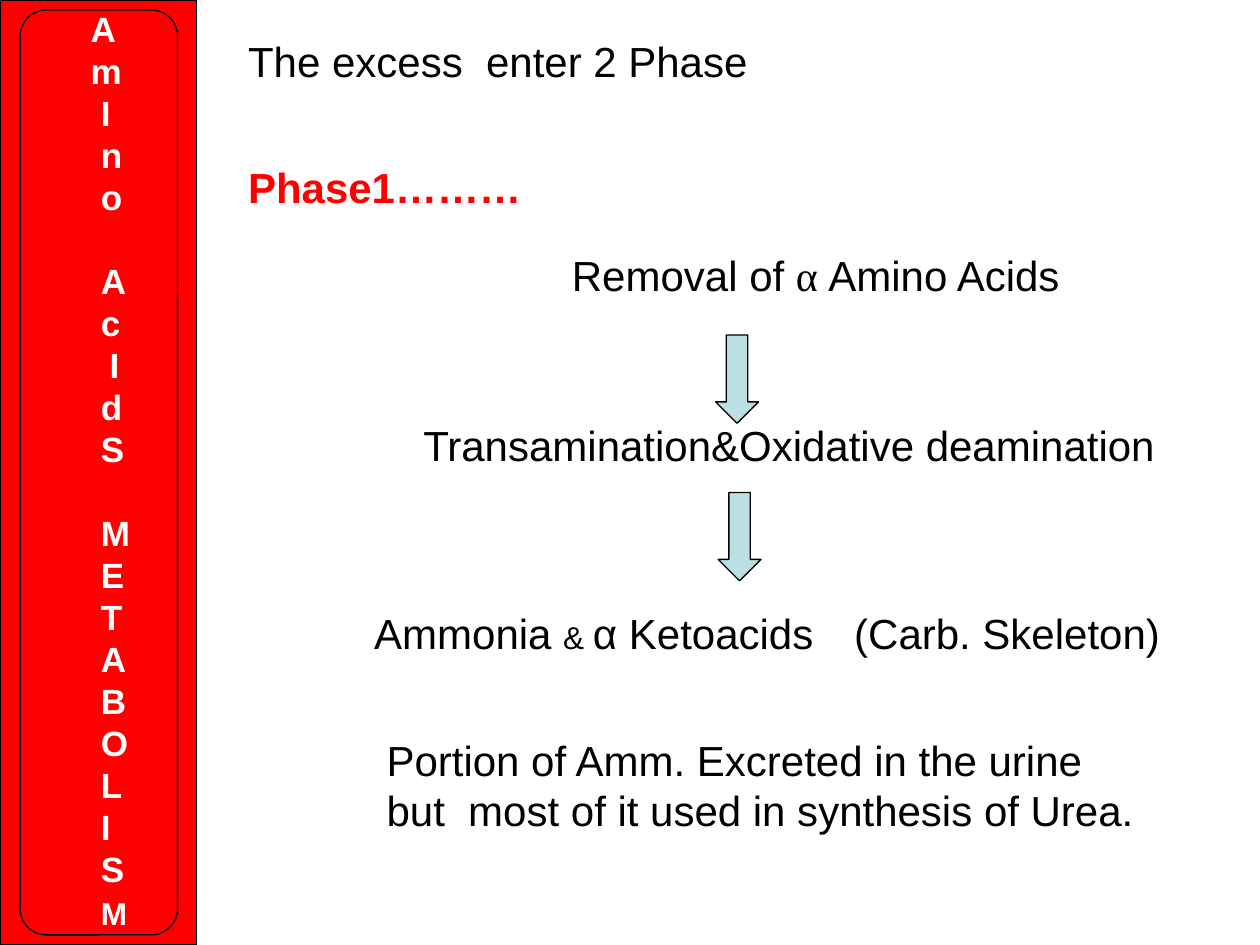
from dataclasses import dataclass

from pptx import Presentation
from pptx.dml.color import RGBColor
from pptx.enum.shapes import MSO_SHAPE
from pptx.enum.text import MSO_ANCHOR, PP_ALIGN
from pptx.oxml.xmlchemy import OxmlElement
from pptx.util import Inches, Pt

BLACK = RGBColor(0, 0, 0)
WHITE = RGBColor(255, 255, 255)
RED = RGBColor(255, 0, 0)
PALE_BLUE = RGBColor(0xBB, 0xE0, 0xE3)


@dataclass
class Letter:
    text: str
    indent: float = 0.08
    size: float = 20
    before: float = 0


@dataclass
class TextBox:
    left: float
    top: float
    width: float
    height: float
    inset: float = 0.1


def add_shape(s, kind, left, top, width, height, fill=None):
    sp = s.shapes.add_shape(kind, Inches(left), Inches(top), Inches(width), Inches(height))
    sp.shadow.inherit = False
    if fill is None:
        sp.fill.background()
    else:
        sp.fill.solid()
        sp.fill.fore_color.rgb = fill
    sp.line.color.rgb = BLACK
    sp.line.width = Pt(0.75)
    return sp


def add_text_box(s, box: TextBox):
    sp = s.shapes.add_textbox(Inches(box.left), Inches(box.top), Inches(box.width), Inches(box.height))
    tf = sp.text_frame
    tf.word_wrap = True
    tf.margin_left = Inches(box.inset)
    return tf


def add_run(p, text: str, *, size: float = 24, color: RGBColor = BLACK,
            bold: bool = False, font: str = "Arial"):
    r = p.add_run()
    r.text = text
    r.font.name = font
    r.font.size = Pt(size)
    r.font.color.rgb = color
    r.font.bold = bold


def next_paragraph(tf, *, before: float = 0, indent: float = 0):
    first = tf.paragraphs[0]
    p = tf.add_paragraph() if first.runs else first
    p.alignment = PP_ALIGN.LEFT
    if before:
        p.space_before = Pt(before)
    if indent:
        p._p.get_or_add_pPr().set("marL", str(Inches(indent)))
    return p


def add_tab_stop(p, position: float):
    tabs = OxmlElement("a:tabLst")
    tab = OxmlElement("a:tab")
    tab.set("pos", str(Inches(position)))
    tab.set("algn", "l")
    tabs.append(tab)
    p._p.get_or_add_pPr().append(tabs)


def add_sidebar(s):
    line_height = 24
    letters = [
        Letter("A", indent=0), Letter("m", indent=0), *map(Letter, "Ino"),
        Letter("A", before=line_height), Letter("c"), Letter("I", indent=0.15), *map(Letter, "dS"),
        Letter("M", before=line_height), *map(Letter, "ETABOLIS"), Letter("M", size=18),
    ]
    tf = add_shape(s, MSO_SHAPE.RECTANGLE, 0, 0, 1.56, 7.5, RED).text_frame
    tf.vertical_anchor = MSO_ANCHOR.TOP
    tf.margin_left = Inches(0.72)
    tf.margin_top = Inches(0.06)
    for letter in letters:
        p = next_paragraph(tf, before=letter.before, indent=letter.indent)
        p.line_spacing = Pt(line_height)
        add_run(p, letter.text, size=letter.size, color=WHITE, bold=True)
    add_shape(s, MSO_SHAPE.ROUNDED_RECTANGLE, 0.16, 0.08, 1.25, 7.34)


def add_phase(s):
    tf = add_text_box(s, TextBox(1.87, 0.23, 6.95, 2.22))
    add_run(next_paragraph(tf), "The excess  enter 2 Phase")
    add_run(next_paragraph(tf, before=43.4), "Phase1………", color=RED, bold=True)
    p = next_paragraph(tf, before=21.7, indent=2.57)
    add_run(p, "Removal of ")
    add_run(p, "α ", font="Times New Roman")
    add_run(p, "Amino Acids")


def add_steps(s):
    for left, top in ((5.68, 2.66), (5.7, 3.91)):
        add_shape(s, MSO_SHAPE.DOWN_ARROW, left, top, 0.34, 0.7, PALE_BLUE)

    tf = add_text_box(s, TextBox(2.5, 3.28, 7.27, 0.91, inset=0.86))
    add_run(next_paragraph(tf), "Transamination&Oxidative deamination")

    tf = add_text_box(s, TextBox(2.5, 4.77, 7.03, 0.5, inset=0.47))
    p = next_paragraph(tf)
    add_tab_stop(p, 3.81)
    add_run(p, "Ammonia ")
    add_run(p, "& ", size=18)
    add_run(p, "α Ketoacids\t(Carb. Skeleton)")

    tf = add_text_box(s, TextBox(2.97, 5.78, 6.17, 0.91))
    add_run(next_paragraph(tf),
            "Portion of Amm. Excreted in the urine but  most of it used in synthesis of Urea.")


def main():
    prs = Presentation()
    prs.slide_width = Inches(10)
    prs.slide_height = Inches(7.5)
    s = prs.slides.add_slide(prs.slide_layouts[6])
    add_sidebar(s)
    add_phase(s)
    add_steps(s)
    prs.save("out.pptx")


if __name__ == "__main__":
    main()
